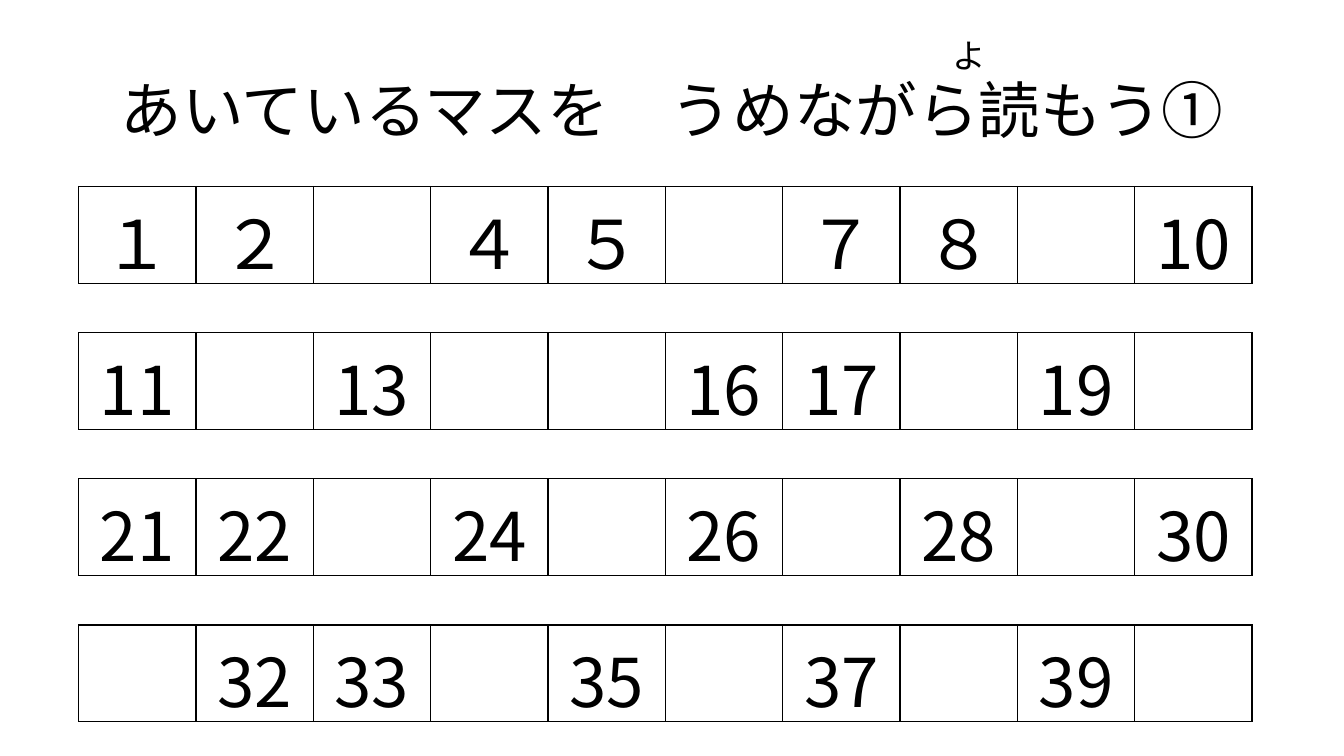
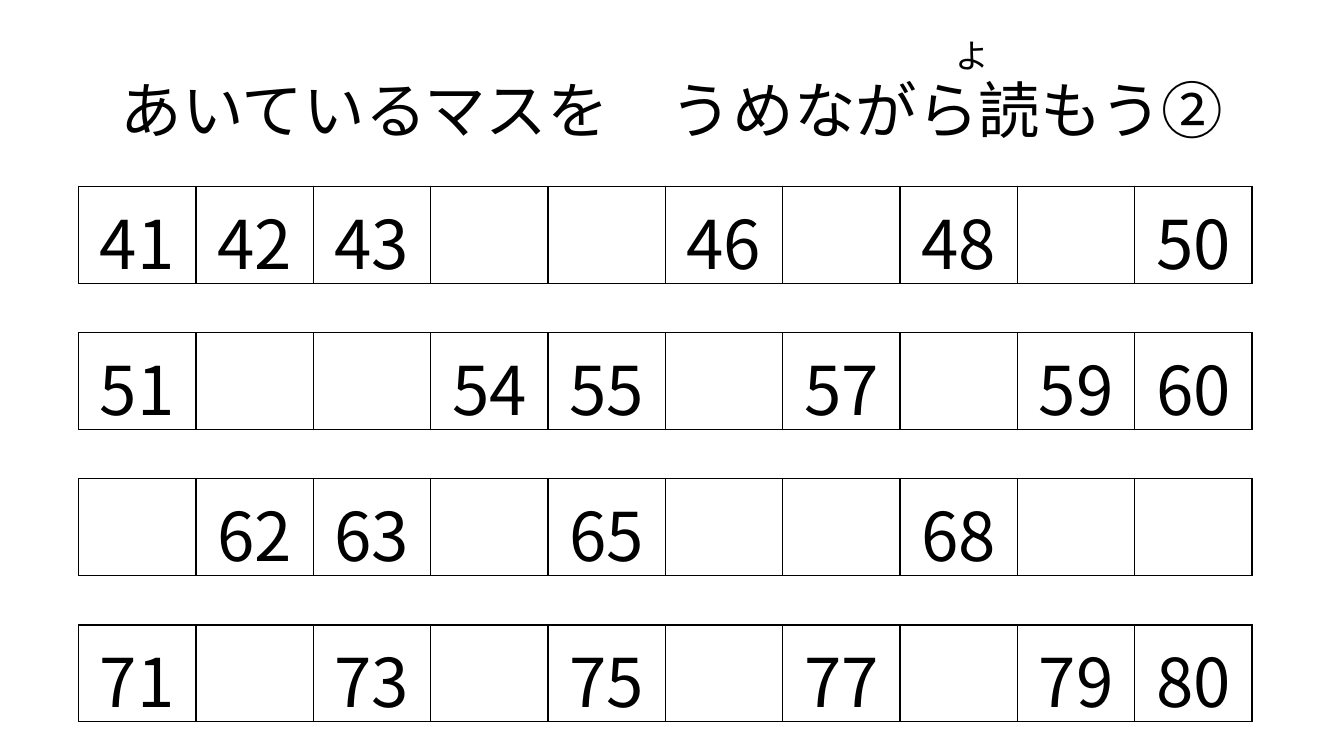
from dataclasses import dataclass

import lxml.etree
import pptx
import pptx.dml.color
import pptx.enum.text
import pptx.oxml.ns
import pptx.util

Inches = pptx.util.Inches
Pt = pptx.util.Pt
ALIGN = pptx.enum.text.PP_ALIGN
ANCHOR = pptx.enum.text.MSO_ANCHOR
qn = pptx.oxml.ns.qn


@dataclass(frozen=True)
class Theme:
    font: str = "Noto Sans CJK JP"
    ink: str = "000000"
    title_size: int = 44
    number_size: int = 48
    ruby_size: int = 24
    border: float = 1


THEME = Theme()

STRIP_LEFT, STRIP_TOP = 0.78, 1.85
STRIP_WIDTH, STRIP_HEIGHT = 11.64, 0.96
STRIP_PITCH = 1.45
STRIP_CELLS = 10

# Title, left edge of the reading above 読, then the strips (None is a square to fill in).
SHEETS = [
    ("あいているマスを　うめながら読もう①", 9.35, [
        ["１", "２", None, "４", "５", None, "７", "８", None, "10"],
        ["11", None, "13", None, None, "16", "17", None, "19", None],
        ["21", "22", None, "24", None, "26", None, "28", None, "30"],
        [None, "32", "33", None, "35", None, "37", None, "39", None],
    ]),
    ("あいているマスを　うめながら読もう②", 9.38, [
        ["41", "42", "43", None, None, "46", None, "48", None, "50"],
        ["51", None, None, "54", "55", None, "57", None, "59", "60"],
        [None, "62", "63", None, "65", None, None, "68", None, None],
        ["71", None, "73", None, "75", None, "77", None, "79", "80"],
    ]),
]


def write(frame, text, size, align=ALIGN.LEFT, line_spacing=None):
    paragraph = frame.paragraphs[0]
    paragraph.alignment = align
    paragraph.line_spacing = line_spacing
    run = paragraph.add_run()
    run.text = text
    run.font.size = Pt(size)
    run.font.name = THEME.font
    run.font.color.rgb = pptx.dml.color.RGBColor.from_string(THEME.ink)
    east_asian = lxml.etree.SubElement(run.font._element, qn("a:ea"))
    east_asian.set("typeface", THEME.font)


def add_title(slide, text):
    frame = slide.shapes.add_textbox(
        Inches(0.92), Inches(0.4), Inches(11.5), Inches(1.45)).text_frame
    frame.word_wrap = True
    frame.vertical_anchor = ANCHOR.MIDDLE
    write(frame, text, THEME.title_size, align=ALIGN.CENTER, line_spacing=0.9)


def add_ruby(slide, text, left):
    """Place the small reading above a kanji of the title."""
    frame = slide.shapes.add_textbox(
        Inches(left), Inches(0.3), Inches(0.54), Inches(0.5)).text_frame
    frame.word_wrap = False
    frame.auto_size = pptx.enum.text.MSO_AUTO_SIZE.SHAPE_TO_FIT_TEXT
    write(frame, text, THEME.ruby_size)


def outline(cell):
    """Draw all four borders; they must precede the fill in the cell properties."""
    properties = cell._tc.get_or_add_tcPr()
    for position, side in enumerate(("lnL", "lnR", "lnT", "lnB")):
        line = lxml.etree.Element(qn(f"a:{side}"), w=str(Pt(THEME.border)))
        fill = lxml.etree.SubElement(line, qn("a:solidFill"))
        lxml.etree.SubElement(fill, qn("a:srgbClr"), val=THEME.ink)
        properties.insert(position, line)


def add_strip(slide, numbers, top):
    table = slide.shapes.add_table(
        1, STRIP_CELLS, Inches(STRIP_LEFT), Inches(top),
        Inches(STRIP_WIDTH), Inches(STRIP_HEIGHT)).table
    table.first_row = False
    table.horz_banding = False
    for cell, number in zip(table.iter_cells(), numbers):
        cell.fill.background()
        cell.vertical_anchor = ANCHOR.MIDDLE
        outline(cell)
        if number:
            write(cell.text_frame, number, THEME.number_size, align=ALIGN.CENTER)


def main():
    deck = pptx.Presentation()
    deck.slide_width, deck.slide_height = Inches(13.33), Inches(7.5)
    for title, ruby_left, strips in SHEETS:
        slide = deck.slides.add_slide(deck.slide_layouts[6])
        add_title(slide, title)
        for row, numbers in enumerate(strips):
            add_strip(slide, numbers, STRIP_TOP + row * STRIP_PITCH)
        add_ruby(slide, "よ", ruby_left)
    deck.save("out.pptx")


if __name__ == "__main__":
    main()
